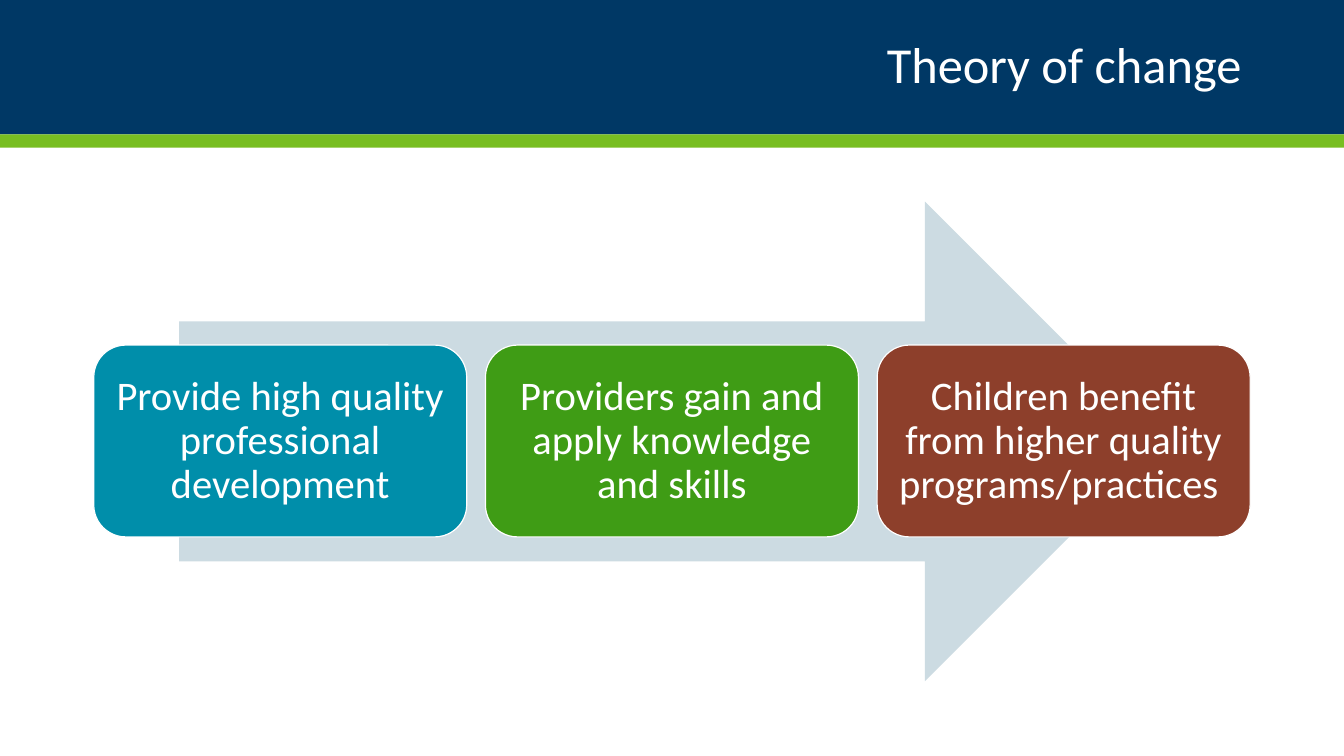
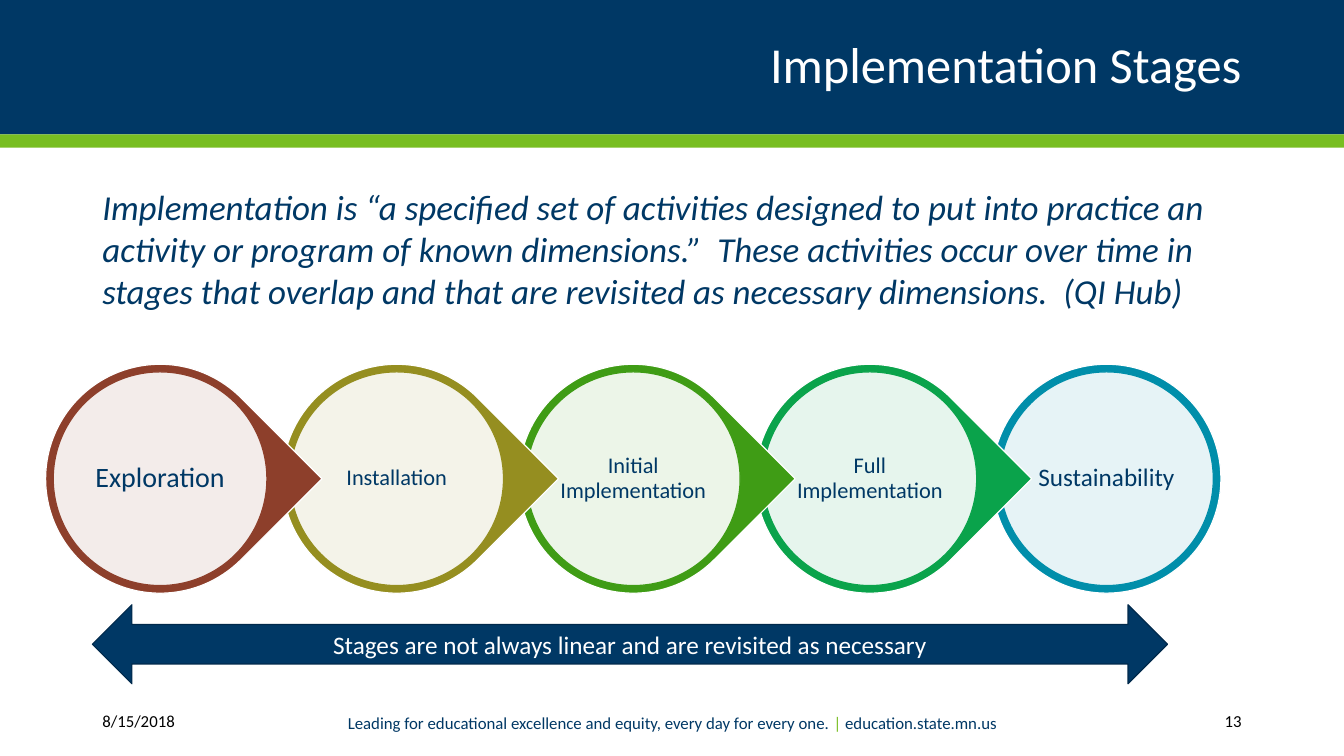
from lxml.etree import SubElement
from pptx import Presentation
from pptx.dml.color import RGBColor
from pptx.enum.shapes import MSO_SHAPE
from pptx.enum.text import MSO_ANCHOR, PP_ALIGN
from pptx.oxml.ns import qn
from pptx.util import Pt

FONT = "Calibri"
SLIDE_WIDTH, SLIDE_HEIGHT = 960, 540
MARGIN = 66
CONTENT_WIDTH = SLIDE_WIDTH - 2 * MARGIN

NAVY = "003865"
DARK_NAVY = "00294B"
LIME = "78BE21"
PALE_BLUE = "CCDBE2"
WHITE = "FFFFFF"
BLACK = "000000"
TEAL = "008EAA"
GREEN = "3F9C15"
EMERALD = "0AA34B"
OLIVE = "958E20"
RUST = "8D3F2B"


def rgb(hex_color):
    return RGBColor.from_string(hex_color)


def add_preset(slide, preset, left, top, width, height, fill, line=None):
    shape = slide.shapes.add_shape(preset, Pt(left), Pt(top), Pt(width), Pt(height))
    shape.shadow.inherit = False
    shape.fill.solid()
    shape.fill.fore_color.rgb = rgb(fill)
    if line:
        shape.line.color.rgb = rgb(line)
        shape.line.width = Pt(0.85)
    else:
        shape.line.fill.background()
    return shape


def set_opacity(shape, percent):
    fill_color = shape.fill._xPr.find(qn("a:solidFill"))[0]
    SubElement(fill_color, qn("a:alpha"), val=str(percent * 1000))


def write(shape, parts, size, align=PP_ALIGN.CENTER, inset=None,
          anchor=MSO_ANCHOR.MIDDLE, spacing=1.0, italic=False):
    """Fill a shape with one paragraph made of (text, colour) parts."""
    frame = shape.text_frame
    frame.word_wrap = True
    frame.vertical_anchor = anchor
    if inset is not None:
        frame.margin_left = frame.margin_right = Pt(inset)
        frame.margin_top = frame.margin_bottom = Pt(inset)
    paragraph = frame.paragraphs[0]
    paragraph.alignment = align
    paragraph.line_spacing = spacing
    for text, color in parts:
        run = paragraph.add_run()
        run.text = text
        run.font.name = FONT
        run.font.size = Pt(size)
        run.font.italic = italic
        run.font.color.rgb = rgb(color)
    return paragraph


def add_text(slide, left, top, width, height, parts, size, **style):
    box = slide.shapes.add_textbox(Pt(left), Pt(top), Pt(width), Pt(height))
    return write(box, parts, size, **style)


def add_titled_slide(deck, title):
    """Add a blank slide with the navy and lime bands and a title."""
    slide = deck.slides.add_slide(deck.slide_layouts[6])
    add_preset(slide, MSO_SHAPE.RECTANGLE, 0, 0, SLIDE_WIDTH, 96, NAVY)
    add_preset(slide, MSO_SHAPE.RECTANGLE, 0, 96, SLIDE_WIDTH, 9.4, LIME)
    add_text(slide, MARGIN, 12, CONTENT_WIDTH, 72, [(title, WHITE)], 36,
             align=PP_ALIGN.RIGHT, spacing=0.9)
    return slide


def add_footer(slide, date, tagline, address, number):
    top, height = 500.4, 28.8
    add_text(slide, MARGIN, top, 107, height, [(date, BLACK)], 12, align=PP_ALIGN.LEFT)
    add_text(slide, 779, top, 115, height, [(number, BLACK)], 12, align=PP_ALIGN.RIGHT)
    add_text(slide, 227.5, top, 505.5, 31.7,
             [(tagline + " ", NAVY), ("| ", LIME), (address, NAVY)], 12)


def add_steps(slide, steps):
    """Lay rounded step boxes in a row across the slide."""
    left, top, width, height, pitch = 67, 246.5, 266.4, 137, 279.8
    for index, (label, color) in enumerate(steps):
        step = add_preset(slide, MSO_SHAPE.ROUNDED_RECTANGLE, left + index * pitch,
                          top, width, height, color, WHITE)
        write(step, [(label, WHITE)], 29, inset=8.6, spacing=0.9)


def add_stages(slide, stages):
    """Chain the stages; each drop points over the next, the last is a circle."""
    left, top, outer, rim, pitch = 32.6, 260.2, 163.5, 5.45, 169
    inner = outer - 2 * rim
    last = len(stages) - 1
    for index in range(last, -1, -1):
        label, size, color = stages[index]
        x = left + index * pitch
        preset = MSO_SHAPE.OVAL if index == last else MSO_SHAPE.TEAR
        rim_shape = add_preset(slide, preset, x, top, outer, outer, color, WHITE)
        if index < last:
            rim_shape.rotation = 45
        disc = add_preset(slide, MSO_SHAPE.OVAL, x + rim, top + rim, inner, inner,
                          WHITE, color)
        set_opacity(disc, 90)
        write(disc, [(label, NAVY)], size, inset=1, spacing=0.9)


def build_theory_of_change(deck):
    slide = add_titled_slide(deck, "Theory of change")
    add_preset(slide, MSO_SHAPE.RIGHT_ARROW, 128, 144, 704, 342.6, PALE_BLUE)
    add_steps(slide, [
        ("Provide high quality professional development", TEAL),
        ("Providers gain and apply knowledge and skills", GREEN),
        ("Children benefit from higher quality programs/practices ", RUST),
    ])


def build_implementation_stages(deck):
    slide = add_titled_slide(deck, "Implementation Stages")
    definition = (
        "Implementation is “a specified set of activities designed to put into "
        "practice an activity or program of known dimensions.”  These activities "
        "occur over time in stages that overlap and that are revisited as "
        "necessary dimensions.  (QI Hub)"
    )
    paragraph = add_text(slide, MARGIN, 129, 860, 120, [(definition, NAVY)], 25,
                         align=PP_ALIGN.LEFT, anchor=MSO_ANCHOR.TOP, italic=True)
    paragraph.space_before = paragraph.space_after = Pt(10)
    add_footer(slide, "8/15/2018",
               "Leading for educational excellence and equity, every day for every one.",
               "education.state.mn.us", "13")
    add_stages(slide, [
        ("Exploration", 20, RUST),
        ("Installation", 16, OLIVE),
        ("Initial Implementation", 16, GREEN),
        ("Full Implementation", 16, EMERALD),
        ("Sustainability", 18, TEAL),
    ])
    revisit_arrow = add_preset(slide, MSO_SHAPE.LEFT_RIGHT_ARROW, MARGIN, 432, 768,
                               56.4, NAVY, DARK_NAVY)
    write(revisit_arrow,
          [("Stages are not always linear and are revisited as necessary", WHITE)], 18)


def main():
    deck = Presentation()
    deck.slide_width, deck.slide_height = Pt(SLIDE_WIDTH), Pt(SLIDE_HEIGHT)
    build_theory_of_change(deck)
    build_implementation_stages(deck)
    deck.save("out.pptx")


if __name__ == "__main__":
    main()
